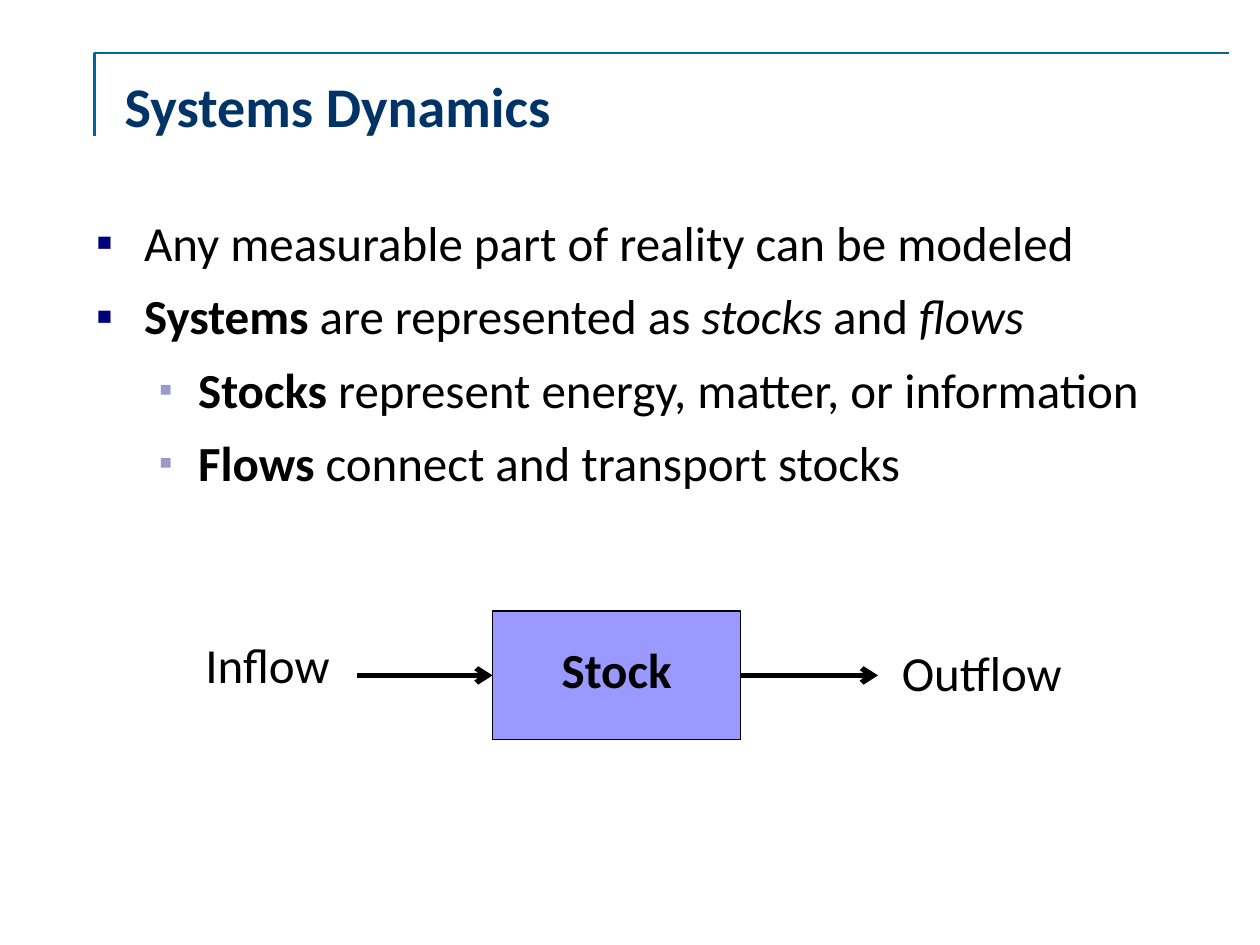
import dataclasses

import lxml.etree
import pptx
import pptx.dml.color
import pptx.enum.shapes
import pptx.enum.text
import pptx.oxml.ns
import pptx.util

Cm = pptx.util.Cm
Pt = pptx.util.Pt
qn = pptx.oxml.ns.qn
RGB = pptx.dml.color.RGBColor.from_string


@dataclasses.dataclass(frozen=True)
class Theme:
    font: str = "Calibri"
    title_size: int = 32
    text_size: int = 28
    title: str = "003366"
    text: str = "000000"
    rule: str = "006699"
    stock: str = "9999FF"
    bullets: tuple = ("00007D", "9999CC")
    bullet_scales: tuple = (100, 80)


theme = Theme()


def style(r, size=theme.text_size, color=theme.text, bold=False, italic=False):
    r.font.name = theme.font
    r.font.size = Pt(size)
    r.font.color.rgb = RGB(color)
    r.font.bold = bold
    r.font.italic = italic


def add_bullet(p, level):
    pPr = p._p.get_or_add_pPr()
    pPr.set("marL", str(Cm((0.97, 2.06)[level])))
    pPr.set("indent", str(-Cm((0.97, 0.79)[level])))
    buClr = lxml.etree.SubElement(pPr, qn("a:buClr"))
    lxml.etree.SubElement(buClr, qn("a:srgbClr"), val=theme.bullets[level])
    lxml.etree.SubElement(pPr, qn("a:buSzPct"), val=str(theme.bullet_scales[level] * 1000))
    lxml.etree.SubElement(pPr, qn("a:buChar"), char="▪")


prs = pptx.Presentation()
prs.slide_width = Cm(25.4)
prs.slide_height = Cm(19.05)
s = prs.slides.add_slide(prs.slide_layouts[1])

builder = s.shapes.build_freeform(Cm(1.91), Cm(2.74))
builder.add_line_segments([(Cm(1.91), Cm(1.07)), (Cm(24.77), Cm(1.07))], close=False)
sp = builder.convert_to_shape()
sp.shadow.inherit = False
sp.fill.background()
sp.line.color.rgb = RGB(theme.rule)
sp.line.width = Pt(1.5)

sp = s.shapes.title
sp.left, sp.top, sp.width, sp.height = Cm(2.26), Cm(1.07), Cm(22.66), Cm(2.11)
tf = sp.text_frame
tf.text = "Systems Dynamics"
tf.auto_size = pptx.enum.text.MSO_AUTO_SIZE.NONE
tf.vertical_anchor = pptx.enum.text.MSO_ANCHOR.MIDDLE
p = tf.paragraphs[0]
p.alignment = pptx.enum.text.PP_ALIGN.LEFT
style(p.runs[0], theme.title_size, theme.title, bold=True)

points = [
    (0, [("Any measurable part of reality can be modeled", "")]),
    (0, [("Systems ", "b"), ("are represented as ", ""), ("stocks", "i"),
         (" and ", ""), ("flows", "i")]),
    (1, [("Stocks", "b"), (" represent energy, matter, or information", "")]),
    (1, [("Flows ", "b"), ("connect and transport stocks", "")]),
]
sp = s.placeholders[1]
sp.left, sp.top, sp.width, sp.height = Cm(1.68), Cm(4.04), Cm(22.86), Cm(6.1)
tf = sp.text_frame
tf.auto_size = pptx.enum.text.MSO_AUTO_SIZE.NONE
for i, (level, parts) in enumerate(points):
    p = tf.add_paragraph() if i else tf.paragraphs[0]
    p.level = level
    add_bullet(p, level)
    p.line_spacing = 1.1
    p.space_before = Pt(5 if i else 0)
    for text, mark in parts:
        r = p.add_run()
        r.text = text
        style(r, bold=mark == "b", italic=mark == "i")

stock = s.shapes.add_shape(pptx.enum.shapes.MSO_SHAPE.RECTANGLE,
                           Cm(9.93), Cm(12.32), Cm(5), Cm(2.59))
stock.shadow.inherit = False
stock.fill.solid()
stock.fill.fore_color.rgb = RGB(theme.stock)
stock.line.color.rgb = RGB(theme.text)
stock.line.width = Pt(0.75)
tf = stock.text_frame
tf.text = "Stock"
tf.word_wrap = False
tf.vertical_anchor = pptx.enum.text.MSO_ANCHOR.MIDDLE
tf.margin_bottom = Cm(0.38)
p = tf.paragraphs[0]
p.alignment = pptx.enum.text.PP_ALIGN.CENTER
style(p.runs[0], bold=True)

middle = stock.top + stock.height // 2
for x1, x2 in ((Cm(7.19), stock.left), (stock.left + stock.width, Cm(17.7))):
    arrow = s.shapes.add_connector(pptx.enum.shapes.MSO_CONNECTOR.STRAIGHT,
                                   x1, middle, x2, middle)
    if x2 == stock.left:
        arrow.end_connect(stock, 1)
    else:
        arrow.begin_connect(stock, 3)
    arrow.line.color.rgb = RGB(theme.text)
    arrow.line.width = Pt(3)
    lxml.etree.SubElement(arrow.line._get_or_add_ln(), qn("a:tailEnd"), type="arrow")
    lxml.etree.SubElement(arrow._element.spPr, qn("a:effectLst"))

for text, left, top, width in (("Inflow", 3.89, 12.67, 3.61), ("Outflow", 17.93, 12.83, 5.36)):
    sp = s.shapes.add_textbox(Cm(left), Cm(top), Cm(width), Cm(1.7))
    tf = sp.text_frame
    tf.text = text
    tf.word_wrap = True
    style(tf.paragraphs[0].runs[0])

prs.save("out.pptx")
